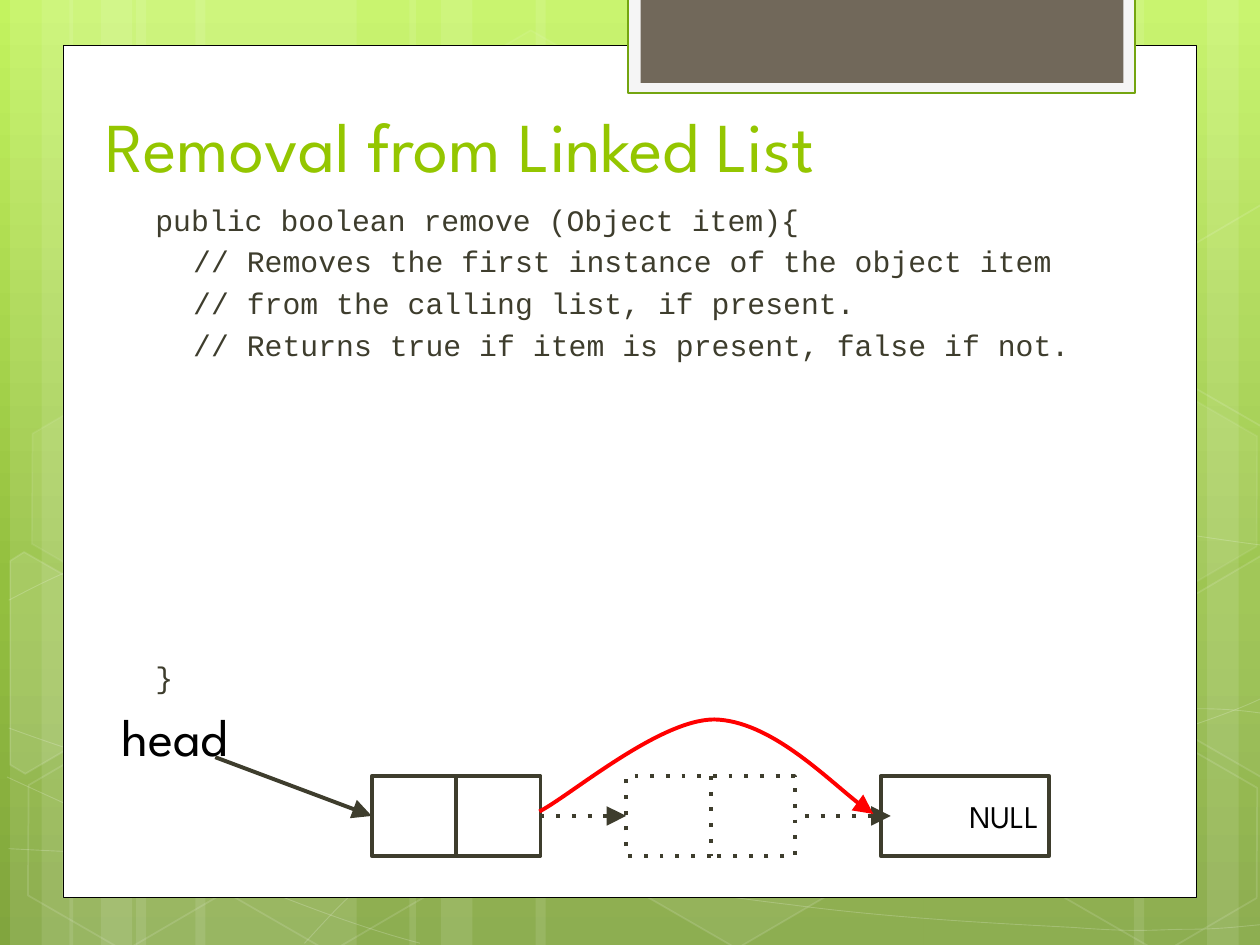
import copy
import math
from dataclasses import dataclass

import lxml.etree
import pptx
import pptx.dml.color
import pptx.enum.dml
import pptx.enum.shapes
import pptx.enum.text
import pptx.oxml.ns
import pptx.util

Pt = pptx.util.Pt
qn = pptx.oxml.ns.qn
SHAPE = pptx.enum.shapes.MSO_SHAPE
ANCHOR = pptx.enum.text.MSO_ANCHOR
COLORS = {
    "title": "94C600", "ink": "3E3D2D", "black": "000000", "white": "FFFFFF",
    "red": "FF0000", "tab": "71685A", "tab_edge": "74A510", "tab_frame": "F5F5F5",
    "sky": "C3F35F", "meadow": "93BF3F", "ground": "81A53E",
}
HEADING_FONT, CODE_FONT = "League Spartan", "Courier New"
CODE_GAP, CODE_PITCH, HIDDEN_LINES = 3.4, 23.75, 7


@dataclass
class Stroke:
    color: str
    width: float
    alpha: int = 100
    dotted: bool = False
    arrow: bool = False


@dataclass
class Hexagon:
    left: float
    top: float
    fill_alpha: int
    line_alpha: int


BARS = [
    (77.8, 126), (5.8, 36), (23.8, 59.8), (111.6, 126), (39.6, 36), (57.6, 59.8),
    (527.8, 126), (689.8, 36), (648, 59.8), (306, 221.8), (234, 36), (252, 59.8),
]
HEXAGONS = [
    Hexagon(240.5, 25.9, 4, 8), Hexagon(357.8, 424.1, 6, 12), Hexagon(7.9, 425.5, 0, 12),
    Hexagon(10.1, 224.6, 7, 8), Hexagon(125.3, 426.2, 0, 12), Hexagon(542.2, 326.2, 10, 12),
    Hexagon(600.5, 427, 0, 12), Hexagon(600.5, 226.1, 7, 8),
]
LEFT_EDGE = [(5.8, 320.4), (13.7, 315.4), (69.1, 347), (68.4, 410.4), (14.4, 442.1), (5.8, 437)]
RIGHT_EDGE = [(666.7, 349.2), (720.7, 317.5), (726.5, 321.1), (726.5, 441.4), (721.4, 444.2), (666.7, 412.6)]
WAVES = [
    [(5, 485), (44, 487), (83, 489), (137, 488), (191, 487), (258, 486), (330, 479),
     (402, 472), (504, 459), (570, 444), (636, 431), (703, 409), (725, 397)],
    [(5, 343), (26, 332), (47, 321), (87, 310), (128, 300), (186, 284), (250, 279),
     (314, 274), (392, 273), (471, 279), (550, 284), (682, 307), (725, 312)],
    [(4, 444), (91, 484), (178, 523), (240, 539)],
    [(5, 416), (27, 424), (50, 432), (92, 444), (134, 454), (197, 472), (257, 485),
     (317, 497), (392, 510), (452, 517), (512, 525), (576, 528), (614, 530),
     (652, 533), (662, 531), (680, 531), (699, 531), (712, 529), (725, 528)],
    [(174, 539), (187, 525), (200, 510), (217, 498), (235, 485), (259, 470), (279, 460),
     (300, 450), (312, 446), (338, 438), (364, 431), (413, 421), (438, 416),
     (464, 411), (467, 411), (490, 410), (512, 408), (547, 405), (572, 405),
     (597, 404), (638, 405), (638, 405), (654, 405), (670, 405), (686, 405),
     (699, 405), (711, 406), (724, 408)],
]
BYPASS = [(308.2, 463.7), (325.4, 455), (376.6, 411.1), (408.2, 411.1),
          (439.9, 411.8), (483.8, 455.8), (499, 465.1)]
CODE = [
    ("public boolean remove (Object item){", 0, CODE_GAP),
    ("// Removes the first instance of the object item", 21.6, CODE_GAP),
    ("// from the calling list, if present.", 21.6, CODE_GAP),
    ("// Returns true if item is present, false if not.", 21.6, CODE_GAP),
    ("}", 0, CODE_GAP + HIDDEN_LINES * CODE_PITCH),
]


def rgb(name: str):
    return pptx.dml.color.RGBColor.from_string(COLORS[name])


def set_alpha(parent, alpha: int) -> None:
    color = parent.find(qn("a:solidFill")).find(qn("a:srgbClr"))
    lxml.etree.SubElement(color, qn("a:alpha"), val=str(alpha * 1000))


def paint_line(shape, stroke: Stroke) -> None:
    shape.line.color.rgb = rgb(stroke.color)
    shape.line.width = Pt(stroke.width)
    line = shape.element.spPr.find(qn("a:ln"))
    if stroke.alpha < 100:
        set_alpha(line, stroke.alpha)
    if stroke.dotted:
        shape.line.dash_style = pptx.enum.dml.MSO_LINE.ROUND_DOT
        line.find(qn("a:prstDash")).set("val", "dot")
    if stroke.arrow:
        lxml.etree.SubElement(line, qn("a:tailEnd"), type="triangle", w="lg", len="lg")


def paint(shape, fill: str | None = None, alpha: int = 100, stroke: Stroke | None = None):
    shape.shadow.inherit = False
    if fill and alpha:
        shape.fill.solid()
        shape.fill.fore_color.rgb = rgb(fill)
        if alpha < 100:
            set_alpha(shape.element.spPr, alpha)
    else:
        shape.fill.background()
    if stroke:
        paint_line(shape, stroke)
    else:
        shape.line.fill.background()
    return shape


def add_preset(slide, kind, left: float, top: float, width: float, height: float, **style):
    return paint(slide.shapes.add_shape(kind, Pt(left), Pt(top), Pt(width), Pt(height)), **style)


def add_outline(slide, points: list, closed: bool, **style):
    corners = [(Pt(x), Pt(y)) for x, y in points]
    builder = slide.shapes.build_freeform(*corners[0])
    builder.add_line_segments(corners[1:], close=closed)
    return paint(builder.convert_to_shape(), **style)


def add_curve(slide, points: list, stroke: Stroke) -> None:
    shape = add_outline(slide, points, False, stroke=stroke)
    segments = list(shape.element.iter(qn("a:lnTo")))
    for first in range(0, len(segments), 3):
        curve = lxml.etree.Element(qn("a:cubicBezTo"))
        segments[first].addprevious(curve)
        for segment in segments[first:first + 3]:
            curve.append(segment[0])
            segment.getparent().remove(segment)


def add_tilted_outline(slide, points: list, center: tuple, **style) -> None:
    cos, sin = math.cos(math.radians(30)), math.sin(math.radians(30))
    offsets = [(x - center[0], y - center[1]) for x, y in points]
    upright = [(center[0] + x * cos + y * sin, center[1] - x * sin + y * cos) for x, y in offsets]
    add_outline(slide, upright, True, **style).rotation = 30


def add_line(slide, start: tuple, end: tuple, stroke: Stroke, source=None, target=None) -> None:
    line = slide.shapes.add_connector(
        pptx.enum.shapes.MSO_CONNECTOR.STRAIGHT, *(Pt(v) for v in start + end))
    if source:
        line.begin_connect(source, 3)
    if target:
        line.end_connect(target, 1)
    paint_line(line, stroke)
    lxml.etree.SubElement(line.element.spPr, qn("a:effectLst"))


def write(para, text: str, *, font: str, size: float, color: str, indent: float = 0, before: float = 0) -> None:
    para.alignment = pptx.enum.text.PP_ALIGN.LEFT
    para.space_before = Pt(before)
    para._p.get_or_add_pPr().set("marL", str(Pt(indent)))
    span = para.add_run()
    span.text = text
    span.font.name, span.font.size = font, Pt(size)
    span.font.color.rgb = rgb(color)


def place(box, left: float, top: float, width: float, height: float, anchor=ANCHOR.TOP):
    box.left, box.top, box.width, box.height = (Pt(v) for v in (left, top, width, height))
    frame = box.text_frame
    frame.word_wrap = True
    frame.auto_size = pptx.enum.text.MSO_AUTO_SIZE.NONE
    frame.vertical_anchor = anchor
    frame.margin_left = frame.margin_right = frame.margin_top = frame.margin_bottom = Pt(7.2)
    return frame


def draw_backdrop(slide) -> None:
    fill = slide.background.fill
    fill.gradient()
    fill.gradient_angle = 270
    stop_list = slide.element.find(".//" + qn("a:gsLst"))
    stop_list.append(copy.deepcopy(stop_list[-1]))
    for stop, (position, name) in zip(fill.gradient_stops, ((0, "sky"), (0.62, "meadow"), (1, "ground"))):
        stop.position, stop.color.rgb = position, rgb(name)
    for left, width in BARS:
        add_preset(slide, SHAPE.RECTANGLE, left, 0, width, 540, fill="white", alpha=10)
    for wave in WAVES:
        add_curve(slide, wave, Stroke("white", 0.5, 20))
    for item in HEXAGONS:
        hexagon = add_preset(slide, SHAPE.HEXAGON, item.left, item.top, 126, 109.4, fill="white",
                             alpha=item.fill_alpha, stroke=Stroke("white", 1, item.line_alpha))
        hexagon.adjustments[0], hexagon.adjustments[1] = 0.285, 1.155
        hexagon.rotation = 30
    upper_edge = [(x, y - 200.5) for x, y in RIGHT_EDGE]
    for points, center, alpha in ((LEFT_EDGE, (25.9, 385.2), 10), (RIGHT_EDGE, (709.2, 374.4), 4),
                                  (upper_edge, (709.2, 173.9), 0)):
        add_tilted_outline(slide, points, center, fill="white", alpha=alpha, stroke=Stroke("white", 1, 12))
    add_preset(slide, SHAPE.RECTANGLE, 36, 25.9, 648, 487.2, fill="white", stroke=Stroke("black", 0.5))
    add_preset(slide, SHAPE.RECTANGLE, 359, -1.4, 289.6, 54.7, fill="tab_frame", stroke=Stroke("tab_edge", 1.25))
    add_preset(slide, SHAPE.RECTANGLE, 366, -1.4, 276, 48.8, fill="tab")


def draw_list(slide) -> None:
    left, top, width, height, step = 212.4, 443.5, 96.5, 45.5, 145.4
    middle = top + height / 2
    nodes = []
    for index, dotted in enumerate((False, True, False)):
        stroke = Stroke("ink", 2.25, dotted=dotted)
        x = left + index * step
        nodes.append(add_preset(slide, SHAPE.RECTANGLE, x, top, width, height, stroke=stroke))
        if index < 2:
            add_line(slide, (x + width / 2, top), (x + width / 2, top + height), stroke)
    dotted_arrow = Stroke("ink", 2.25, dotted=True, arrow=True)
    add_line(slide, (left + width, middle), (left + step, middle), dotted_arrow, nodes[0], nodes[1])
    add_line(slide, (460, middle), (509, middle), dotted_arrow)
    add_line(slide, (123, 432.7), (left, middle), Stroke("ink", 2.25, arrow=True), target=nodes[0])
    add_curve(slide, BYPASS, Stroke("red", 2.25, arrow=True))
    for text, size, x, y in (("NULL", 18, 546.8, 448.2), ("head", 30, 62.3, 395.3)):
        frame = place(slide.shapes.add_textbox(0, 0, 0, 0), x, y, 100, 36)
        write(frame.paragraphs[0], text, font=HEADING_FONT, size=size, color="black")


deck = pptx.Presentation()
deck.slide_width, deck.slide_height = Pt(720), Pt(540)
page = deck.slides.add_slide(deck.slide_layouts[5])
draw_backdrop(page)
title = page.shapes.title
title.element.getparent().append(title.element)
title_frame = place(title, 52.9, 23.8, 553, 90, ANCHOR.BOTTOM)
write(title_frame.paragraphs[0], "Removal from Linked List", font=HEADING_FONT, size=40, color="title")
code_frame = place(page.shapes.add_textbox(0, 0, 0, 0), 76.3, 108, 584, 302)
for number, (code, margin, gap) in enumerate(CODE):
    line = code_frame.add_paragraph() if number else code_frame.paragraphs[0]
    write(line, code, font=CODE_FONT, size=17, color="ink", indent=5.4 + margin, before=gap)
draw_list(page)
deck.save("out.pptx")
